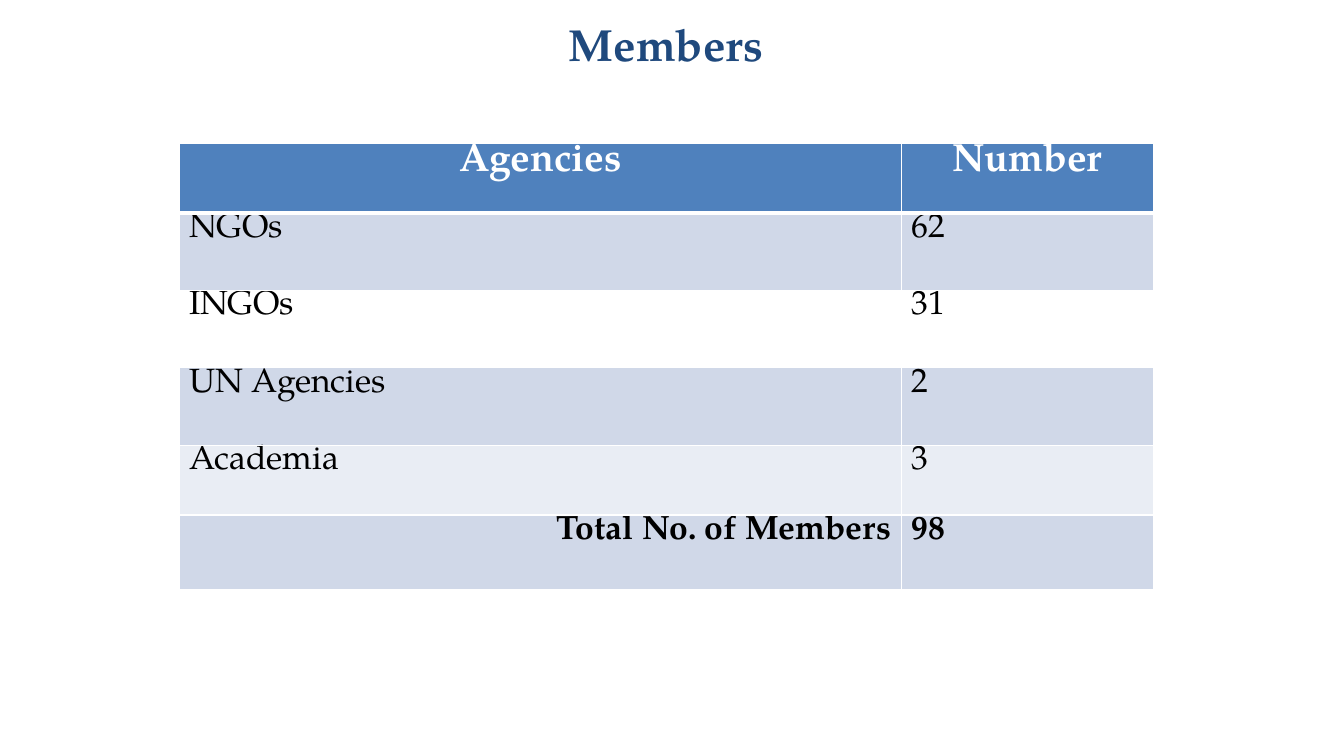
import pptx
import pptx.dml.color
import pptx.enum.text
import pptx.oxml
import pptx.oxml.ns
import pptx.util
from pptx.util import Inches

FONT = "TeX Gyre Pagella"
ALIGN = pptx.enum.text.PP_ALIGN


def format_paragraph(paragraph, size, color, bold, alignment):
    paragraph.alignment = alignment
    paragraph.font.name = FONT
    paragraph.font.size = pptx.util.Pt(size)
    paragraph.font.bold = bold
    paragraph.font.color.rgb = pptx.dml.color.RGBColor.from_string(color)


def add_border(cell, side, points):
    """Add a white border; side is L, R, T or B, in that order, before any fill."""
    cell._tc.get_or_add_tcPr().append(pptx.oxml.parse_xml(
        f'<a:ln{side} {pptx.oxml.ns.nsdecls("a")} w="{pptx.util.Pt(points)}">'
        f'<a:solidFill><a:srgbClr val="FFFFFF"/></a:solidFill></a:ln{side}>'))


presentation = pptx.Presentation()
presentation.slide_width = Inches(13.33)
presentation.slide_height = Inches(7.5)
slide = presentation.slides.add_slide(presentation.slide_layouts[5])

title = slide.shapes.title
title.left, title.top = Inches(1.22), Inches(0.21)
title.width, title.height = Inches(10.78), Inches(0.45)
title.text_frame.text = "Members"
title.text_frame.vertical_anchor = pptx.enum.text.MSO_ANCHOR.MIDDLE
format_paragraph(title.text_frame.paragraphs[0], 32, "1F497D", True, ALIGN.CENTER)

# Label, number, row height, fill
members = [
    ("Agencies", "Number", 0.69, "4F81BD"),
    ("NGOs", "62", 0.77, "D0D8E8"),
    ("INGOs", "31", 0.77, None),
    ("UN Agencies", "2", 0.77, "D0D8E8"),
    ("Academia", "3", 0.69, "E9EDF4"),
    ("Total No. of Members", "98", 0.74, "D0D8E8"),
]
total_row = len(members) - 1
table_height = sum(height for _, _, height, _ in members)
table = slide.shapes.add_table(len(members), 2, Inches(1.78), Inches(1.42),
                               Inches(9.66), Inches(table_height)).table
table.columns[0].width = Inches(7.16)
table.columns[1].width = Inches(2.5)

for row, (label, number, height, fill) in enumerate(members):
    table.rows[row].height = Inches(height)
    is_header = row == 0
    for column, text in enumerate((label, number)):
        cell = table.cell(row, column)
        cell.text = text
        cell.margin_left = cell.margin_right = Inches(0.1)
        cell.margin_top = cell.margin_bottom = 0
        for side in "LRTB":
            heavy = (is_header and side == "B") or (row == 1 and side == "T")
            add_border(cell, side, 3 if heavy else 1)
        if fill:
            cell.fill.solid()
            cell.fill.fore_color.rgb = pptx.dml.color.RGBColor.from_string(fill)
        else:
            cell.fill.background()
        if is_header:
            alignment = ALIGN.CENTER
        elif row == total_row and column == 0:
            alignment = ALIGN.RIGHT
        else:
            alignment = ALIGN.LEFT
        format_paragraph(cell.text_frame.paragraphs[0], 28 if is_header else 24,
                         "FFFFFF" if is_header else "000000",
                         is_header or row == total_row, alignment)

presentation.save("out.pptx")
